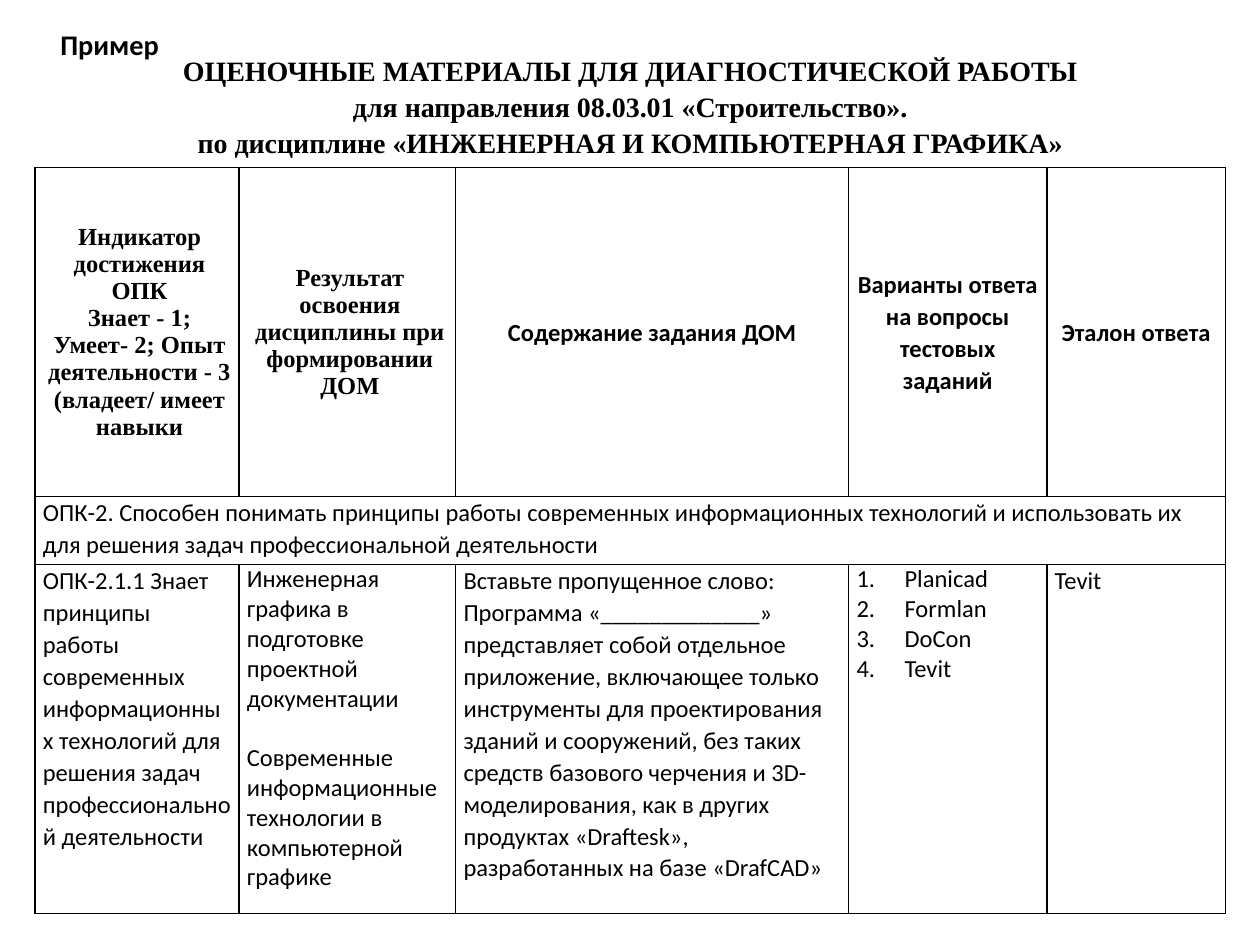
from dataclasses import dataclass
from lxml.etree import SubElement
from pptx import Presentation
from pptx.dml.color import RGBColor
from pptx.enum.text import MSO_ANCHOR as Anchor, PP_ALIGN as Align
from pptx.oxml.ns import qn
from pptx.util import Pt


@dataclass(frozen=True)
class Theme:
    ink: str = "000000"
    sans: str = "Calibri"
    serif: str = "Times New Roman"
    label_size: float = 16.2
    heading_size: float = 16
    cell_size: float = 14
    border: float = 1
    loose: float = 1.07


THEME = Theme()
SERIF = {"name": THEME.serif, "bold": True}
SANS = {"name": THEME.sans, "bold": True}
PLAIN = {"name": THEME.sans, "bold": False}
LOOSE = {"line_spacing": THEME.loose}
CENTERED = {"alignment": Align.CENTER}
SPACED_CENTER = {**LOOSE, **CENTERED}

COLUMN_WIDTHS = [116.6, 123.8, 224.6, 113.2, 102.2]
ROW_HEIGHTS = [187.9, 38.9, 199.4]

HEADING = [
    "ОЦЕНОЧНЫЕ МАТЕРИАЛЫ ДЛЯ ДИАГНОСТИЧЕСКОЙ РАБОТЫ",
    "для направления 08.03.01 «Строительство».",
    "по дисциплине «ИНЖЕНЕРНАЯ И КОМПЬЮТЕРНАЯ ГРАФИКА»",
]
COLUMN_HEADERS = [
    (["Индикатор достижения ОПК",
      "Знает - 1; Умеет- 2; Опыт деятельности - 3 (владеет/ имеет навыки"],
     SERIF, CENTERED, {"marL": 2.9}),
    (["Результат освоения дисциплины при формировании ДОМ"],
     SERIF, CENTERED, {"marL": 2.9}),
    (["Содержание задания ДОМ"], SANS, SPACED_CENTER, {}),
    (["Варианты ответа на вопросы тестовых заданий"], SANS, SPACED_CENTER, {}),
    (["Эталон ответа"], SANS, SPACED_CENTER, {}),
]
COMPETENCE = (
    "ОПК-2. Способен понимать принципы работы современных информационных "
    "технологий и использовать их для решения задач профессиональной деятельности"
)
TASK = [
    (["ОПК-2.1.1 Знает принципы работы современных информационных технологий "
      "для решения задач профессиональной деятельности"], PLAIN, LOOSE, {}),
    (["Инженерная графика в подготовке проектной документации",
      "Современные информационные технологии в компьютерной графике"],
     PLAIN, {}, {}),
    (["Вставьте пропущенное слово:",
      "Программа «_____________» представляет собой отдельное приложение, "
      "включающее только инструменты для проектирования зданий и сооружений, "
      "без таких средств базового черчения и 3D-моделирования, как в других "
      "продуктах «Draftesk», разработанных на базе «DrafCAD»"], PLAIN, LOOSE, {}),
    (["Planicad", "Formlan", "DoCon", "Tevit"], PLAIN, {},
     {"marL": 27.4, "indent": -27.4}),
    (["Tevit"], PLAIN, LOOSE, {}),
]


def assign(target, values):
    for name, value in values.items():
        setattr(target, name, value)


class SlideBuilder:
    def __init__(self, slide, theme):
        self.slide = slide
        self.theme = theme

    def paragraphs(self, frame, lines, font, size, layout, indents):
        for index, line in enumerate(lines):
            paragraph = frame.add_paragraph() if index else frame.paragraphs[0]
            assign(paragraph, layout)
            run = paragraph.add_run()
            run.text = line
            assign(run.font, {**font, "size": Pt(size)})
            run.font.color.rgb = RGBColor.from_string(self.theme.ink)
            properties = paragraph._p.get_or_add_pPr()
            for name, length in indents.items():
                properties.set(name, str(Pt(length)))

    def text(self, box, lines, font, size, layout, anchor=Anchor.TOP):
        frame = self.slide.shapes.add_textbox(*map(Pt, box)).text_frame
        assign(frame, {"word_wrap": True, "vertical_anchor": anchor})
        self.paragraphs(frame, lines, font, size, layout, {})

    def table(self, left, top, widths, heights):
        table = self.slide.shapes.add_table(
            len(heights), len(widths), Pt(left), Pt(top),
            Pt(sum(widths)), Pt(sum(heights))).table
        assign(table, {"first_row": False, "horz_banding": False})
        for column, width in zip(table.columns, widths):
            column.width = Pt(width)
        for row, height in zip(table.rows, heights):
            row.height = Pt(height)
        for cell in table.iter_cells():
            self.borders(cell)
            cell.fill.background()
            assign(cell, {"margin_left": Pt(4.5), "margin_right": Pt(4.5),
                          "margin_top": 0, "margin_bottom": 0})
        return table

    def borders(self, cell):
        properties = cell._tc.get_or_add_tcPr()
        for side in ("lnL", "lnR", "lnT", "lnB"):
            line = SubElement(properties, qn(f"a:{side}"), w=str(Pt(self.theme.border)))
            paint = SubElement(line, qn("a:solidFill"))
            SubElement(paint, qn("a:srgbClr"), val=self.theme.ink)

    def cell(self, cell, content, anchor=Anchor.TOP):
        lines, font, layout, indents = content
        cell.vertical_anchor = anchor
        self.paragraphs(cell.text_frame, lines, font, self.theme.cell_size,
                        layout, indents)

    def number(self, frame):
        for paragraph in frame.paragraphs:
            SubElement(paragraph._p.get_or_add_pPr(), qn("a:buAutoNum"),
                       type="arabicPeriod")


def main():
    deck = Presentation()
    assign(deck, {"slide_width": Pt(720), "slide_height": Pt(540)})
    builder = SlideBuilder(deck.slides.add_slide(deck.slide_layouts[6]), THEME)

    builder.text((27.4, 18, 648, 17.3), ["Пример"], SANS, THEME.label_size,
                 {"line_spacing": 0.9}, Anchor.MIDDLE)
    builder.text((20, 26, 680.4, 69.8), HEADING, SERIF, THEME.heading_size,
                 SPACED_CENTER)

    assessment = builder.table(20, 95.8, COLUMN_WIDTHS, ROW_HEIGHTS)
    for column, (header, task) in enumerate(zip(COLUMN_HEADERS, TASK)):
        builder.cell(assessment.cell(0, column), header, Anchor.MIDDLE)
        builder.cell(assessment.cell(2, column), task)
    competence = assessment.cell(1, 0)
    competence.merge(assessment.cell(1, len(COLUMN_WIDTHS) - 1))
    builder.cell(competence, ([COMPETENCE], PLAIN, LOOSE, {}))

    outcomes = assessment.cell(2, 1).text_frame
    outcomes.paragraphs[1].space_before = Pt(17)
    builder.number(assessment.cell(2, 3).text_frame)

    deck.save("out.pptx")


if __name__ == "__main__":
    main()
